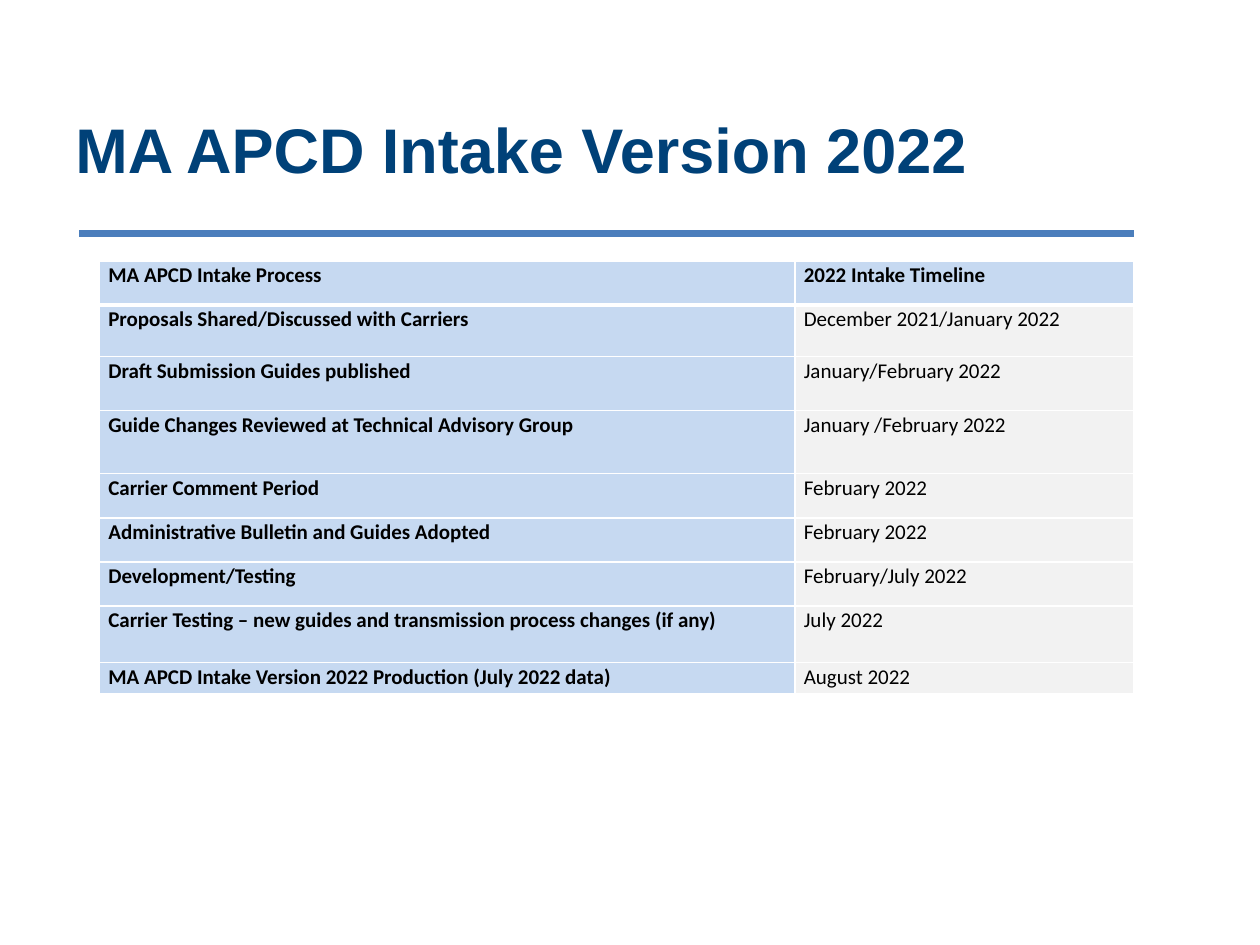
from dataclasses import dataclass

from lxml.etree import SubElement
from pptx import Presentation
from pptx.dml.color import RGBColor
from pptx.enum.shapes import MSO_CONNECTOR
from pptx.enum.text import MSO_ANCHOR
from pptx.oxml.ns import qn
from pptx.util import Inches, Pt

TITLE = "MA APCD Intake Version 2022"
HEADER = ("MA APCD Intake Process", "2022 Intake Timeline")
# Step, timing, row height in inches
STEPS = [
    ("Proposals Shared/Discussed with Carriers", "December 2021/January 2022", 0.41),
    ("Draft Submission Guides published", "January/February 2022", 0.43),
    ("Guide Changes Reviewed at Technical Advisory Group", "January /February 2022", 0.5),
    ("Carrier Comment Period", "February 2022", 0.35),
    ("Administrative Bulletin and Guides Adopted", "February 2022", 0.35),
    ("Development/Testing", "February/July 2022", 0.35),
    ("Carrier Testing – new guides and transmission process changes (if any)", "July 2022", 0.45),
    ("MA APCD Intake Version 2022 Production (July 2022 data)", "August 2022", 0.25),
]
ROWS = [(*HEADER, 0.35), *STEPS]
COLUMN_WIDTHS = (5.52, 2.69)
TABLE_LEFT, TABLE_TOP = 0.79, 2.07
RULE_LEFT, RULE_RIGHT, RULE_Y = 0.63, 9, 1.85


@dataclass(frozen=True)
class Theme:
    title_font: str = "Arial"
    table_font: str = "Calibri"
    title_size: int = 36
    table_size: int = 12
    title: str = "004178"
    rule: str = "4B7EBC"
    text: str = "000000"
    label_fill: str = "C6D9F1"
    date_fill: str = "F2F2F2"
    border: str = "FFFFFF"
    rule_width: int = 4
    border_width: int = 1
    header_border_width: int = 3


THEME = Theme()


def style_text(para, name, size, color, bold):
    font = para.font
    font.name, font.size, font.bold = name, Pt(size), bold
    font.color.rgb = RGBColor.from_string(color)


def add_title(page):
    box = page.shapes.add_textbox(Inches(0.5), Inches(0.62), Inches(8.5), Inches(1.11))
    frame = box.text_frame
    frame.word_wrap = True
    frame.vertical_anchor = MSO_ANCHOR.MIDDLE
    para = frame.paragraphs[0]
    para.text = TITLE
    style_text(para, THEME.title_font, THEME.title_size, THEME.title, True)


def add_rule(page):
    rule = page.shapes.add_connector(
        MSO_CONNECTOR.STRAIGHT,
        Inches(RULE_LEFT), Inches(RULE_Y), Inches(RULE_RIGHT), Inches(RULE_Y))
    rule.line.width = Pt(THEME.rule_width)
    rule.line.color.rgb = RGBColor.from_string(THEME.rule)
    SubElement(rule._element.spPr, qn("a:effectLst"))


def set_borders(cell, top, bottom):
    sides = {"L": THEME.border_width, "R": THEME.border_width, "T": top, "B": bottom}
    properties = cell._tc.get_or_add_tcPr()
    for side, width in sides.items():
        line = SubElement(properties, qn(f"a:ln{side}"), w=str(Pt(width)))
        SubElement(SubElement(line, qn("a:solidFill")), qn("a:srgbClr"), val=THEME.border)


def fill_cell(cell, text, row, column):
    label = row == 0 or column == 0
    thin, thick = THEME.border_width, THEME.header_border_width
    set_borders(cell, thick if row == 1 else thin, thick if row == 0 else thin)
    cell.fill.solid()
    cell.fill.fore_color.rgb = RGBColor.from_string(
        THEME.label_fill if label else THEME.date_fill)
    cell.margin_left = cell.margin_right = Inches(0.07)
    cell.margin_top = cell.margin_bottom = 0
    para = cell.text_frame.paragraphs[0]
    para.text = text
    para.line_spacing = 1.07
    style_text(para, THEME.table_font, THEME.table_size, THEME.text, label)


def add_timeline(page):
    table = page.shapes.add_table(
        len(ROWS), len(COLUMN_WIDTHS), Inches(TABLE_LEFT), Inches(TABLE_TOP),
        Inches(sum(COLUMN_WIDTHS)), Inches(sum(height for *_, height in ROWS))).table
    for column, width in zip(table.columns, COLUMN_WIDTHS):
        column.width = Inches(width)
    for row, (*texts, height) in enumerate(ROWS):
        table.rows[row].height = Inches(height)
        for column, text in enumerate(texts):
            fill_cell(table.cell(row, column), text, row, column)


def main():
    deck = Presentation()
    deck.slide_width, deck.slide_height = Inches(10), Inches(7.5)
    page = deck.slides.add_slide(deck.slide_layouts[6])
    add_rule(page)
    add_title(page)
    add_timeline(page)
    deck.save("out.pptx")


if __name__ == "__main__":
    main()
